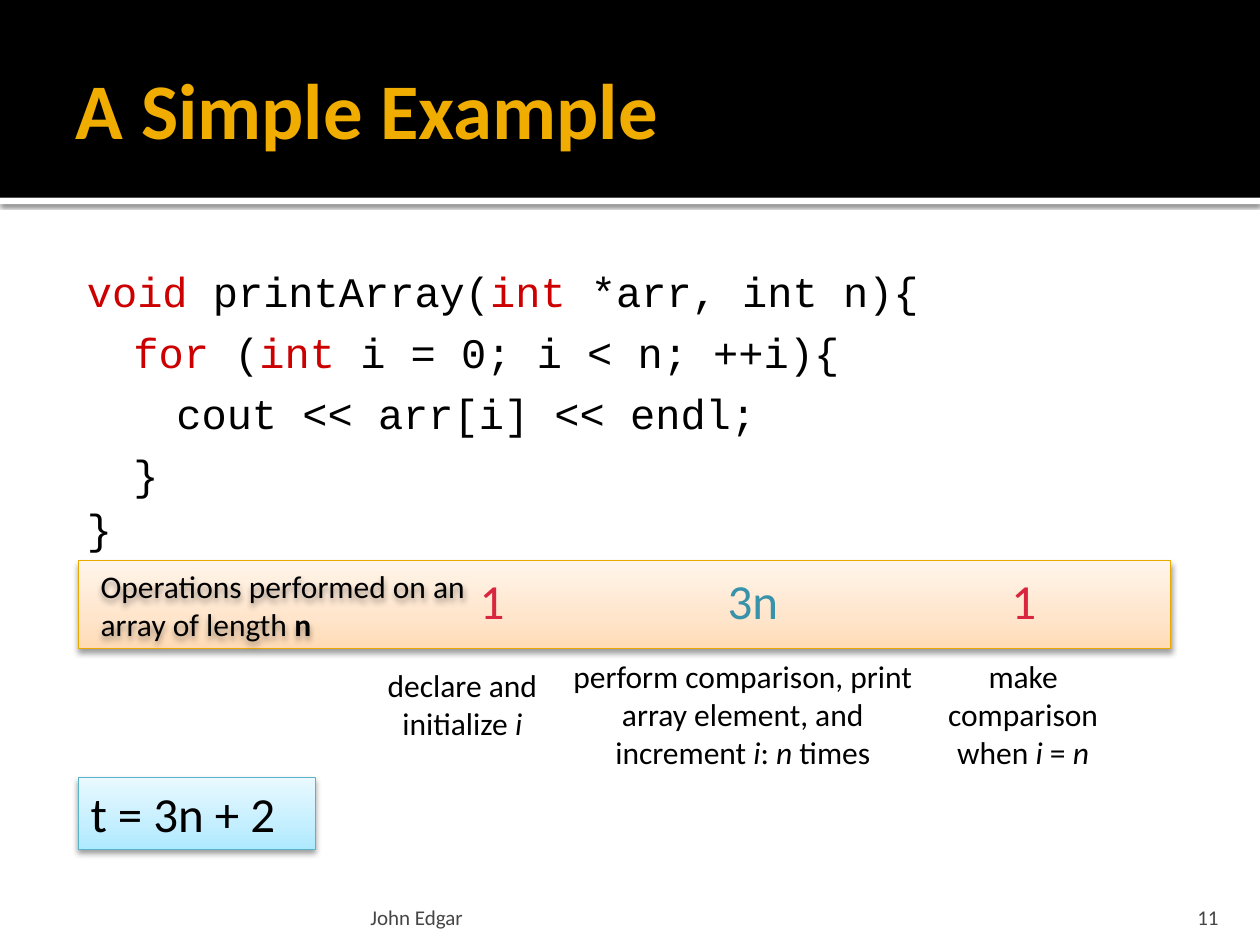
import pptx
import pptx.util
import pptx.oxml
import pptx.oxml.ns
import pptx.dml.color
import pptx.enum.shapes
import pptx.enum.text
from lxml import etree

Inches = pptx.util.Inches
Pt = pptx.util.Pt
ALIGN = pptx.enum.text.PP_ALIGN
ANCHOR = pptx.enum.text.MSO_ANCHOR

COLORS = {
    "black": "000000", "white": "FFFFFF", "title": "F0AD00",
    "keyword": "CC0000", "footer": "454545", "once": "D9253E",
    "loop": "3792AA", "orange_line": "EBA900", "blue_line": "5BB3CA",
}
GRADIENTS = {
    "orange": ["FFDBB5", "FFE5CB", "FFF5EB"],
    "blue": ["ADE9FF", "C5EFFF", "E9F9FF"],
}
NORMAL_INSETS = (0.1, 0.05, 0.1, 0.05)


def write_text(shape, paragraphs, size, anchor=ANCHOR.TOP, align=ALIGN.LEFT,
               insets=NORMAL_INSETS, font="Calibri"):
    """Fill a shape; each run is (text, color name, style), style being "", "b" or "i"."""
    frame = shape.text_frame
    frame.word_wrap = True
    frame.vertical_anchor = anchor
    (frame.margin_left, frame.margin_top,
     frame.margin_right, frame.margin_bottom) = map(Inches, insets)
    for index, runs in enumerate(paragraphs):
        paragraph = frame.add_paragraph() if index else frame.paragraphs[0]
        paragraph.alignment = align
        for text, color, style in runs:
            run = paragraph.add_run()
            run.text = text
            run.font.name = font
            run.font.size = Pt(size)
            run.font.bold = style == "b"
            run.font.italic = style == "i"
            run.font.color.rgb = pptx.dml.color.RGBColor.from_string(COLORS[color])


def add_shadow(shape, alpha, blur, distance):
    """Give a shape a black shadow that falls straight down."""
    shape.shadow.inherit = False
    effects = shape._element.spPr.find(pptx.oxml.ns.qn("a:effectLst"))
    effects.append(pptx.oxml.parse_xml(
        f'<a:outerShdw {pptx.oxml.ns.nsdecls("a")} blurRad="{Pt(blur)}" '
        f'dist="{Pt(distance)}" dir="5400000" rotWithShape="0">'
        f'<a:srgbClr val="{COLORS["black"]}"><a:alpha val="{alpha * 1000}"/>'
        '</a:srgbClr></a:outerShdw>'))


presentation = pptx.Presentation()
presentation.slide_width = Inches(10)
presentation.slide_height = Inches(7.5)
slide = presentation.slides.add_slide(presentation.slide_layouts[5])
shapes = slide.shapes
rectangle = pptx.enum.shapes.MSO_SHAPE.RECTANGLE

# Header band with a white strip below it
for top, height, color in [(1.57, 0.05, "white"), (0, 1.57, "black")]:
    band = shapes.add_shape(rectangle, 0, Inches(top), Inches(10), Inches(height))
    band.fill.solid()
    band.fill.fore_color.rgb = pptx.dml.color.RGBColor.from_string(COLORS[color])
    band.line.fill.background()
    if color == "white":
        add_shadow(band, 60, 2.5, 0.8)
    else:
        band.shadow.inherit = False

# Title, moved in front of the band
title = shapes.title
title.left, title.top, title.width, title.height = map(Inches, (0.5, 0.17, 9, 1.37))
write_text(title, [[("A Simple Example", "title", "b")]], 45, ANCHOR.MIDDLE,
           insets=(0.1, 0.05, 0.05, 0.05))
shapes._spTree.append(title._element)

# Code, indented by nesting level
code_lines = [
    (0, [("void ", "keyword", ""), ("printArray(", "black", ""),
         ("int", "keyword", ""), (" *arr, int n){", "black", "")]),
    (1, [("for", "keyword", ""), (" (", "black", ""),
         ("int ", "keyword", ""), ("i = 0; i < n; ++i){", "black", "")]),
    (2, [("cout << arr[i] << endl;", "black", "")]),
    (1, [("}", "black", "")]),
    (0, [("}", "black", "")]),
]
level_indents = [(0.48, -0.35), (0.8, -0.3), (1.09, -0.25)]
code = shapes.add_textbox(Inches(0.5), Inches(1.94), Inches(9), Inches(5.06))
write_text(code, [runs for level, runs in code_lines], 24,
           insets=(0.06, 0.14, 0.1, 0.05), font="Courier New")
for paragraph, (level, runs) in zip(code.text_frame.paragraphs, code_lines):
    margin, indent = level_indents[level]
    paragraph.level = level
    paragraph.line_spacing = 1.07
    paragraph.space_before = Pt(4 if level else 0)
    properties = paragraph._p.get_or_add_pPr()
    properties.set("marL", str(Inches(margin)))
    properties.set("indent", str(Inches(indent)))

# Gradient panels: operation counts and the total
panels = {}
for name, box in [("orange", (0.62, 4.45, 8.67, 0.7)), ("blue", (0.62, 6.17, 1.88, 0.57))]:
    panel = shapes.add_shape(rectangle, *map(Inches, box))
    panel.line.color.rgb = pptx.dml.color.RGBColor.from_string(COLORS[name + "_line"])
    panel.line.width = Pt(0.5)
    stops = "".join(f'<a:gs pos="{position}000"><a:srgbClr val="{color}"/></a:gs>'
                    for position, color in zip((0, 35, 100), GRADIENTS[name]))
    panel._element.spPr.find(pptx.oxml.ns.qn("a:prstGeom")).addnext(pptx.oxml.parse_xml(
        f'<a:gradFill {pptx.oxml.ns.nsdecls("a")} rotWithShape="1"><a:gsLst>{stops}'
        '</a:gsLst><a:lin ang="16200000" scaled="0"/></a:gradFill>'))
    add_shadow(panel, 38, 3.5, 2)
    panels[name] = panel
write_text(panels["blue"], [[("t = 3n + 2", "black", "")]], 28, ANCHOR.MIDDLE)

# Heading of the counts
heading = shapes.add_textbox(*map(Inches, (0.7, 4.45, 3.12, 0.71)))
write_text(heading, [[("Operations performed on an array of length ", "black", ""),
                      ("n", "black", "b")]], 18)
add_shadow(heading, 38, 3.5, 2)

# Counts
for left, width, text, color in [(2.81, 2.19, "1", "once"), (4.14, 3.67, "3n", "loop"),
                                 (7.97, 0.31, "1", "once")]:
    count = shapes.add_textbox(Inches(left), Inches(4.53), Inches(width), Inches(0.47))
    write_text(count, [[(text, color, "")]], 28, ANCHOR.MIDDLE, ALIGN.CENTER, (0, 0, 0, 0))

# Explanations below the counts
explanations = [
    ((2.89, 5.23, 1.56, 0.71), [("declare and initialize ", ""), ("i", "i")]),
    ((4.45, 5.16, 2.89, 1.01),
     [("perform comparison, print array element, and increment ", ""), ("i", "i"),
      (": ", ""), ("n", "i"), (" times", "")]),
    ((7.34, 5.16, 1.56, 1.01),
     [("make comparison when ", ""), ("i", "i"), (" = ", ""), ("n", "i")]),
]
for box, runs in explanations:
    explanation = shapes.add_textbox(*map(Inches, box))
    write_text(explanation, [[(text, "black", style) for text, style in runs]], 18,
               ANCHOR.MIDDLE, ALIGN.CENTER)

# Footer and slide number
for left, width, text, align, side in [(2.89, 6.02, "John Edgar", ALIGN.LEFT, 0.05),
                                       (8.97, 0.8, "11", ALIGN.RIGHT, 0.1)]:
    footer = shapes.add_textbox(Inches(left), Inches(7.08), Inches(width), Inches(0.3))
    write_text(footer, [[(text, "footer", "")]], 12, ANCHOR.BOTTOM, align,
               (side, 0.05, side, 0))

presentation.save("out.pptx")
